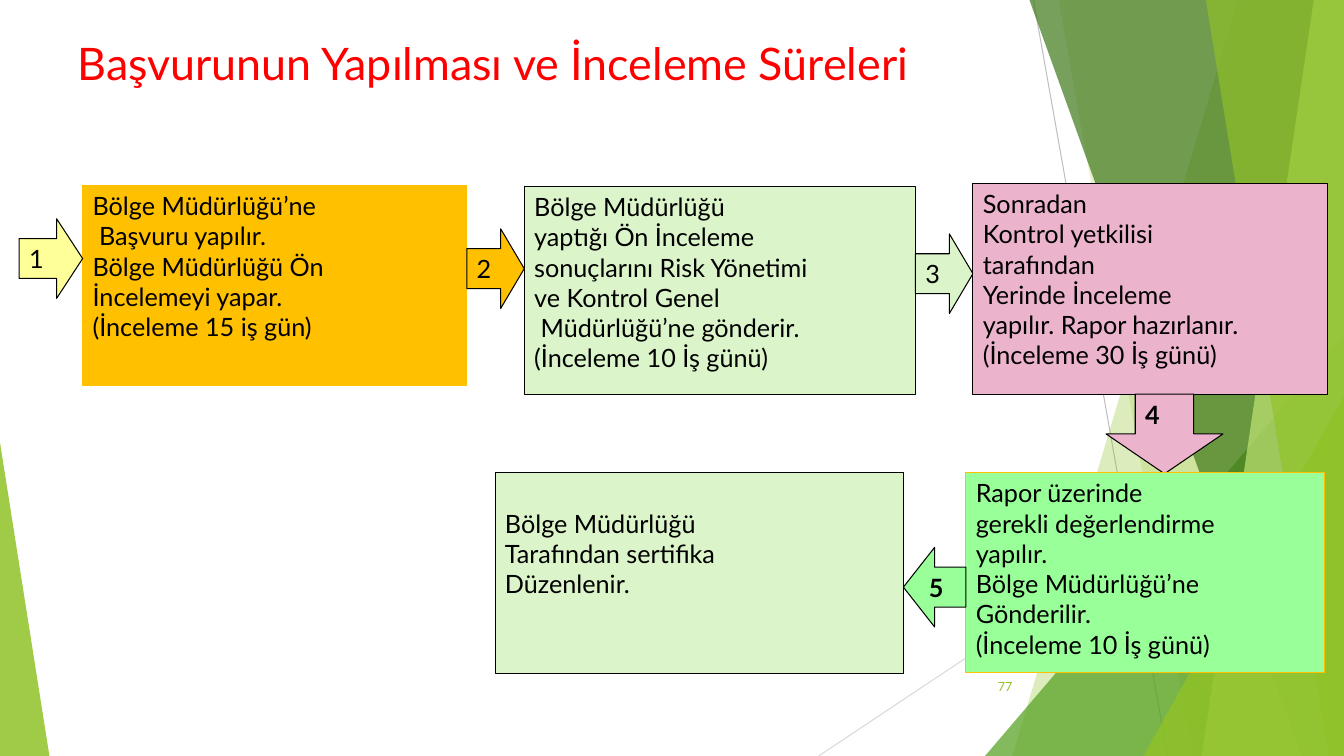
from dataclasses import dataclass

from lxml.etree import SubElement
from pptx import Presentation
from pptx.dml.color import RGBColor
from pptx.enum.shapes import MSO_CONNECTOR, MSO_SHAPE
from pptx.enum.text import MSO_ANCHOR, PP_ALIGN
from pptx.oxml.ns import qn
from pptx.util import Inches, Pt

FONT = "Lato"
SLIDE_WIDTH = 13.33
SLIDE_HEIGHT = 7.5
MARGIN_TOP = 0.05
LINE_HEIGHT = 0.3
COLORS = {
    "black": "000000",
    "red": "FF0000",
    "amber": "FFC000",
    "yellow": "FFFF99",
    "pale_green": "DBF4CA",
    "pink": "EBB3CC",
    "mint": "99FF99",
    "lime": "90C226",
    "light_lime": "C0E474",
    "green": "54A021",
    "dark_green": "3F7819",
    "gray": "BFBFBF",
    "light_gray": "D9D9D9",
}


@dataclass
class Ray:
    start: tuple[float, float]
    end: tuple[float, float]
    color: str


@dataclass
class Band:
    top_x: float
    bottom_x: float
    color: str
    opacity: int


@dataclass
class Corner:
    left: float
    top: float
    width: float
    apex: float
    color: str
    opacity: int


@dataclass
class Step:
    kind: MSO_SHAPE
    box: tuple[float, float, float, float]
    fill: str
    lines: list[str]
    line: str = "black"
    bold: bool = False
    head: float = 0.5
    skipped_lines: int = 0


RAYS = [
    Ray((10.25, 0), (11.58, 7.5), "gray"),
    Ray((13.33, 4.03), (8.12, 7.5), "light_gray"),
]
FACETS = [
    Band(12.28, 10.04, "lime", 30),
    Band(10.5, 11.83, "lime", 20),
    Corner(9.77, 3.33, 3.56, 1, "green", 72),
    Band(10.21, 12.91, "dark_green", 70),
    Band(13.03, 11.92, "light_lime", 70),
    Band(11.96, 13.18, "lime", 65),
    Corner(11.34, 3.93, 1.99, 1, "lime", 80),
    Corner(0, 4.39, 0.49, 0, "lime", 85),
]
STEPS = [
    Step(MSO_SHAPE.RECTANGLE, (0.82, 1.84, 3.81, 1.98), "amber",
         ["Bölge Müdürlüğü’ne", " Başvuru yapılır.", "Bölge Müdürlüğü Ön",
          "İncelemeyi yapar.", "(İnceleme 15 iş gün)"], line="amber"),
    Step(MSO_SHAPE.RIGHT_ARROW, (0.19, 2.17, 0.63, 0.79), "yellow", ["1"], head=0.41),
    Step(MSO_SHAPE.RIGHT_ARROW, (4.63, 2.27, 0.57, 0.79), "amber", ["2"], head=0.41),
    Step(MSO_SHAPE.RECTANGLE, (5.2, 1.85, 3.88, 2.06), "pale_green",
         ["Bölge Müdürlüğü", "yaptığı Ön İnceleme", "sonuçlarını Risk Yönetimi",
          "ve Kontrol Genel", " Müdürlüğü’ne gönderir.", "(İnceleme 10 İş günü)"]),
    Step(MSO_SHAPE.RIGHT_ARROW, (9.08, 2.32, 0.57, 0.79), "pale_green", ["3"], head=0.41),
    Step(MSO_SHAPE.RECTANGLE, (9.65, 1.82, 3.52, 2.09), "pink",
         ["Sonradan", "Kontrol yetkilisi", "tarafından", "Yerinde İnceleme",
          "yapılır. Rapor hazırlanır.", "(İnceleme 30 İş günü)"]),
    Step(MSO_SHAPE.DOWN_ARROW, (10.97, 3.91, 1.16, 0.79), "pink", ["4"], bold=True),
    Step(MSO_SHAPE.RECTANGLE, (9.58, 4.69, 3.56, 1.98), "mint",
         ["Rapor üzerinde", "gerekli değerlendirme", "yapılır.",
          "Bölge Müdürlüğü’ne", "Gönderilir.", "(İnceleme 10 İş günü)"], line="amber"),
    Step(MSO_SHAPE.LEFT_ARROW, (8.96, 5.43, 0.62, 0.79), "mint", ["5"], bold=True),
    Step(MSO_SHAPE.RECTANGLE, (4.91, 4.69, 4.05, 1.99), "pale_green",
         ["Bölge Müdürlüğü", "Tarafından sertifika", "Düzenlenir."], skipped_lines=1),
]


def rgb(name: str) -> RGBColor:
    return RGBColor.from_string(COLORS[name])


def write(text_frame, lines: list[str], size: float, color: str,
          bold: bool = False, align=PP_ALIGN.LEFT, anchor=MSO_ANCHOR.TOP) -> None:
    text_frame.word_wrap = True
    text_frame.vertical_anchor = anchor
    text_frame.text = "\n".join(lines)
    for paragraph in text_frame.paragraphs:
        paragraph.alignment = align
        for run in paragraph.runs:
            run.font.name = FONT
            run.font.size = Pt(size)
            run.font.bold = bold
            run.font.color.rgb = rgb(color)


def draw_ray(slide, ray: Ray) -> None:
    points = [Inches(value) for value in (*ray.start, *ray.end)]
    connector = slide.shapes.add_connector(MSO_CONNECTOR.STRAIGHT, *points)
    connector.line.color.rgb = rgb(ray.color)
    connector.line.width = Pt(0.75)
    SubElement(connector._element.spPr, qn("a:effectLst"))


def draw_facet(slide, facet: Band | Corner) -> None:
    if isinstance(facet, Band):
        builder = slide.shapes.build_freeform(Inches(facet.top_x), 0)
        corners = [(SLIDE_WIDTH, 0), (SLIDE_WIDTH, SLIDE_HEIGHT),
                   (facet.bottom_x, SLIDE_HEIGHT)]
        builder.add_line_segments([(Inches(x), Inches(y)) for x, y in corners])
        shape = builder.convert_to_shape()
    else:
        shape = slide.shapes.add_shape(
            MSO_SHAPE.ISOSCELES_TRIANGLE, Inches(facet.left), Inches(facet.top),
            Inches(facet.width), Inches(SLIDE_HEIGHT - facet.top))
        shape.adjustments[0] = facet.apex
    shape.shadow.inherit = False
    shape.line.fill.background()
    shape.fill.solid()
    shape.fill.fore_color.rgb = rgb(facet.color)
    color = shape._element.spPr.find(qn("a:solidFill"))[0]
    SubElement(color, qn("a:alpha"), val=str(facet.opacity * 1000))


def draw_step(slide, step: Step) -> None:
    shape = slide.shapes.add_shape(step.kind, *[Inches(value) for value in step.box])
    shape.shadow.inherit = False
    shape.fill.solid()
    shape.fill.fore_color.rgb = rgb(step.fill)
    shape.line.color.rgb = rgb(step.line)
    shape.line.width = Pt(0.75)
    if step.kind != MSO_SHAPE.RECTANGLE:
        shape.adjustments[1] = step.head
    shape.text_frame.margin_top = Inches(MARGIN_TOP + step.skipped_lines * LINE_HEIGHT)
    write(shape.text_frame, step.lines, 18, "black", step.bold)


def main() -> None:
    presentation = Presentation()
    presentation.slide_width = Inches(SLIDE_WIDTH)
    presentation.slide_height = Inches(SLIDE_HEIGHT)
    slide = presentation.slides.add_slide(presentation.slide_layouts[6])
    for ray in RAYS:
        draw_ray(slide, ray)
    for facet in FACETS:
        draw_facet(slide, facet)
    title = slide.shapes.add_textbox(Inches(0.67), Inches(0.3), Inches(12), Inches(1.01))
    write(title.text_frame, ["Başvurunun Yapılması ve İnceleme Süreleri"], 32, "red")
    number = slide.shapes.add_textbox(Inches(9.39), Inches(6.61), Inches(0.75), Inches(0.4))
    write(number.text_frame, ["77"], 9, "lime", align=PP_ALIGN.RIGHT, anchor=MSO_ANCHOR.MIDDLE)
    for step in STEPS:
        draw_step(slide, step)
    presentation.save("out.pptx")


if __name__ == "__main__":
    main()
